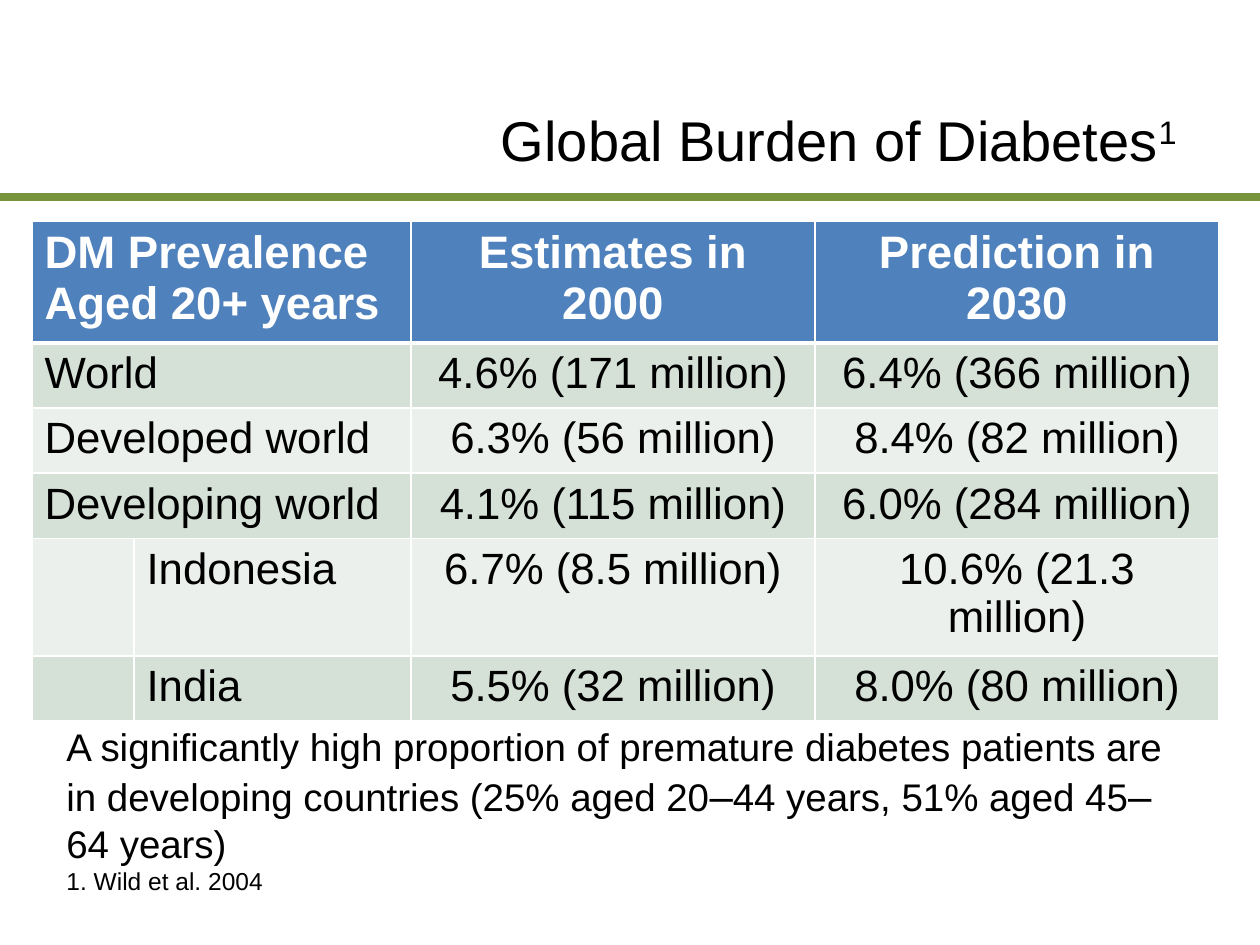
from dataclasses import dataclass

from lxml import etree
from pptx import Presentation
from pptx.dml.color import RGBColor
from pptx.enum.shapes import MSO_CONNECTOR
from pptx.enum.text import MSO_ANCHOR, PP_ALIGN
from pptx.oxml.ns import qn
from pptx.util import Emu, Pt

LEFT, CENTER, RIGHT = PP_ALIGN.LEFT, PP_ALIGN.CENTER, PP_ALIGN.RIGHT
TOP, MIDDLE = MSO_ANCHOR.TOP, MSO_ANCHOR.MIDDLE
STRAIGHT = MSO_CONNECTOR.STRAIGHT
EMU_PER_PX = 914400 / 126
SLIDE_WIDTH, SLIDE_HEIGHT = 1260, 945


@dataclass(frozen=True)
class Theme:
    font: str = "Arial"
    text: str = "000000"
    white: str = "FFFFFF"
    rule: str = "77933C"
    header: str = "4F81BD"
    bands: tuple[str, str] = ("D5E0D6", "EBF0EC")
    title_size: int = 32
    header_size: int = 26
    body_size: int = 25
    note_size: int = 22
    dash_size: int = 24
    source_size: int = 14
    rule_width: float = 4.75
    border_width: int = 1
    header_border_width: int = 3


@dataclass(frozen=True)
class Box:
    left: int
    top: int
    width: int
    height: int


@dataclass(frozen=True)
class TextRun:
    text: str
    size: int
    color: str
    bold: bool = False
    superscript: bool = False


@dataclass(frozen=True)
class PrevalenceRow:
    region: str
    estimate: str
    prediction: str
    indented: bool = False


THEME = Theme()
TITLE_BOX = Box(189, 84, 1000, 110)
TABLE_BOX = Box(32, 221, 1187, 447)
NOTE_BOX = Box(54, 717, 1142, 186)
RULE_Y = 197
COLUMN_WIDTHS = (102, 277, 404, 404)
HEADER_HEIGHT, ROW_HEIGHT = 122, 65
HEADER_LABELS = (
    (("DM Prevalence", "Aged 20+ years"), LEFT),
    (("Estimates in 2000",), CENTER),
    (("Prediction in 2030",), CENTER),
)
ROWS = (
    PrevalenceRow("World", "4.6% (171 million)", "6.4% (366 million)"),
    PrevalenceRow("Developed world", "6.3% (56 million)", "8.4% (82 million)"),
    PrevalenceRow("Developing world", "4.1% (115 million)", "6.0% (284 million)"),
    PrevalenceRow("Indonesia", "6.7% (8.5 million)", "10.6% (21.3 million)", True),
    PrevalenceRow("India", "5.5% (32 million)", "8.0% (80 million)", True),
)


def px(value: int) -> Emu:
    return Emu(round(value * EMU_PER_PX))


def place(box: Box) -> tuple[Emu, Emu, Emu, Emu]:
    return px(box.left), px(box.top), px(box.width), px(box.height)


def write_paragraphs(text_frame, paragraphs: list[list[TextRun]], alignment) -> None:
    for index, runs in enumerate(paragraphs):
        paragraph = text_frame.add_paragraph() if index else text_frame.paragraphs[0]
        paragraph.alignment = alignment
        for item in runs:
            run = paragraph.add_run()
            run.text = item.text
            run.font.name = THEME.font
            run.font.size = Pt(item.size)
            run.font.bold = item.bold
            run.font.color.rgb = RGBColor.from_string(item.color)
            if item.superscript:
                run.font._element.set("baseline", "30000")


def add_text(slide, box: Box, paragraphs: list[list[TextRun]], alignment, anchor) -> None:
    text_frame = slide.shapes.add_textbox(*place(box)).text_frame
    text_frame.word_wrap = True
    text_frame.vertical_anchor = anchor
    write_paragraphs(text_frame, paragraphs, alignment)


def add_rule(slide) -> None:
    connector = slide.shapes.add_connector(
        STRAIGHT, px(0), px(RULE_Y), px(SLIDE_WIDTH), px(RULE_Y)
    )
    connector.line.color.rgb = RGBColor.from_string(THEME.rule)
    connector.line.width = Pt(THEME.rule_width)
    etree.SubElement(connector._element.spPr, qn("a:effectLst"))


def style_cell(cell, fill: str, row_index: int) -> None:
    properties = cell._tc.get_or_add_tcPr()
    heavy_edge = {0: "lnB", 1: "lnT"}.get(row_index)
    for edge in ("lnL", "lnR", "lnT", "lnB"):
        width = THEME.header_border_width if edge == heavy_edge else THEME.border_width
        line = etree.SubElement(properties, qn(f"a:{edge}"), w=str(Pt(width)))
        solid = etree.SubElement(line, qn("a:solidFill"))
        etree.SubElement(solid, qn("a:srgbClr"), val=THEME.white)
    cell.fill.solid()
    cell.fill.fore_color.rgb = RGBColor.from_string(fill)


def add_prevalence_table(slide) -> None:
    table = slide.shapes.add_table(
        len(ROWS) + 1, len(COLUMN_WIDTHS), *place(TABLE_BOX)
    ).table
    for column, width in zip(table.columns, COLUMN_WIDTHS):
        column.width = px(width)
    for row_index, table_row in enumerate(table.rows):
        table_row.height = px(ROW_HEIGHT if row_index else HEADER_HEIGHT)
        fill = THEME.bands[(row_index - 1) % 2] if row_index else THEME.header
        for cell in table_row.cells:
            style_cell(cell, fill, row_index)

    table.cell(0, 0).merge(table.cell(0, 1))
    for column_index, (labels, alignment) in zip((0, 2, 3), HEADER_LABELS):
        paragraphs = [
            [TextRun(label, THEME.header_size, THEME.white, bold=True)] for label in labels
        ]
        write_paragraphs(table.cell(0, column_index).text_frame, paragraphs, alignment)

    for row_index, row in enumerate(ROWS, start=1):
        if not row.indented:
            table.cell(row_index, 0).merge(table.cell(row_index, 1))
        entries = (
            (int(row.indented), row.region, LEFT),
            (2, row.estimate, CENTER),
            (3, row.prediction, CENTER),
        )
        for column_index, text, alignment in entries:
            runs = [TextRun(text, THEME.body_size, THEME.text)]
            write_paragraphs(table.cell(row_index, column_index).text_frame, [runs], alignment)


def main() -> None:
    presentation = Presentation()
    presentation.slide_width = px(SLIDE_WIDTH)
    presentation.slide_height = px(SLIDE_HEIGHT)
    slide = presentation.slides.add_slide(presentation.slide_layouts[6])

    add_rule(slide)
    title = [
        TextRun("Global Burden of Diabetes", THEME.title_size, THEME.text),
        TextRun("1", THEME.title_size, THEME.text, superscript=True),
    ]
    add_text(slide, TITLE_BOX, [title], RIGHT, MIDDLE)
    add_prevalence_table(slide)

    dash = TextRun("–", THEME.dash_size, THEME.text)
    note = [
        TextRun(
            "A significantly high proportion of premature diabetes patients are "
            "in developing countries (25% aged 20",
            THEME.note_size,
            THEME.text,
        ),
        dash,
        TextRun("44 years, 51% aged 45", THEME.note_size, THEME.text),
        dash,
        TextRun("64 years)", THEME.note_size, THEME.text),
    ]
    source = [TextRun("1. Wild et al. 2004", THEME.source_size, THEME.text)]
    add_text(slide, NOTE_BOX, [note, source], LEFT, TOP)
    presentation.save("out.pptx")


if __name__ == "__main__":
    main()
